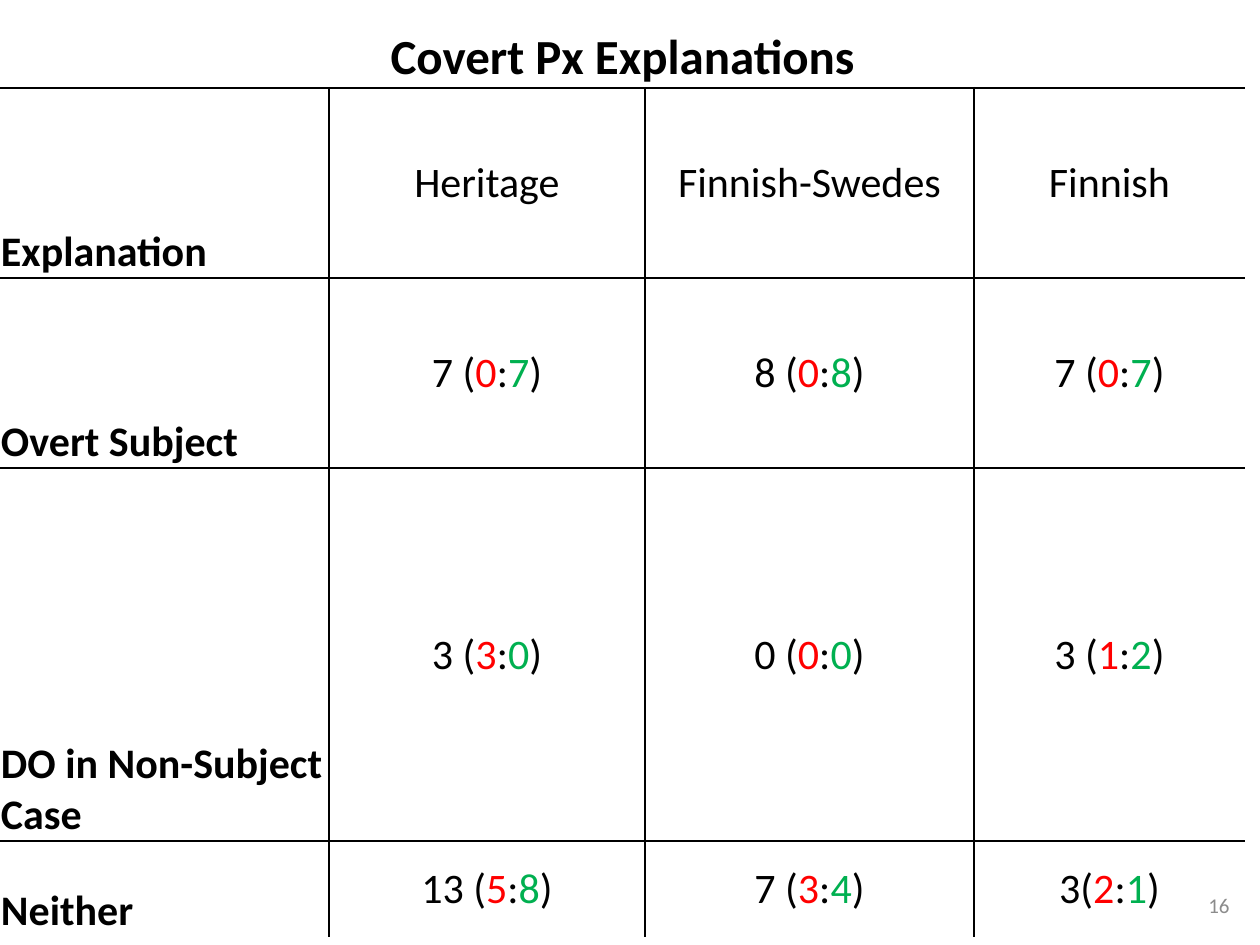
"""Build the Covert Px Explanations table slide."""
from dataclasses import dataclass

from lxml import etree
from pptx import Presentation
from pptx import util as u
from pptx.dml import color
from pptx.enum import text
from pptx.oxml import ns


@dataclass(frozen=True)
class Theme:
    font: str = "Calibri"
    ink: str = "000000"
    red: str = "FF0000"
    green: str = "00B050"
    gray: str = "8C8C8C"
    title_size: int = 28
    body_size: int = 24
    number_size: int = 12
    rule: float = 1.5


THEME = Theme()
COLUMNS = [329, 316, 329, 271]
ROWS = [60, 190, 190, 373, 96]
TITLE = "Covert Px Explanations"
HEADINGS = ["Explanation", "Heritage", "Finnish-Swedes", "Finnish"]
RESULTS = [
    ("Overt Subject", [("7 (", 0, 7), ("8 (", 0, 8), ("7 (", 0, 7)]),
    ("DO in Non-Subject Case", [("3 (", 3, 0), ("0 (", 0, 0), ("3 (", 1, 2)]),
    ("Neither", [("13 (", 5, 8), ("7 (", 3, 4), ("3(", 2, 1)]),
]


def px(length):
    """Turn pixels at 126 to the inch into EMU."""
    return u.Emu(round(length * 914400 / 126))


def write(frame, spans, *, size, bold=False, align=text.PP_ALIGN.LEFT):
    """Fill a text frame with one paragraph of (words, colour) spans."""
    para = frame.paragraphs[0]
    para.alignment = align
    for words, tint in spans:
        span = para.add_run()
        span.text = words
        span.font.name = THEME.font
        span.font.size = u.Pt(size)
        span.font.bold = bold
        span.font.color.rgb = color.RGBColor.from_string(tint)


def ratio(lead, wrong, right):
    """Return the spans of a count with its red and green parts."""
    return [(lead, THEME.ink), (str(wrong), THEME.red), (":", THEME.ink),
            (str(right), THEME.green), (")", THEME.ink)]


class SlideBuilder:
    """Holds the theme and the current slide."""

    def __init__(self, slide, theme):
        """Keep the slide and its style."""
        self.slide = slide
        self.theme = theme

    def borders(self, cell, sides):
        """Rule the named sides of a cell and clear the others."""
        properties = cell._tc.get_or_add_tcPr()
        for index, side in enumerate("LRTB"):
            line = etree.Element(ns.qn(f"a:ln{side}"))
            if side in sides:
                line.set("w", str(u.Pt(self.theme.rule)))
                fill = etree.SubElement(line, ns.qn("a:solidFill"))
                etree.SubElement(fill, ns.qn("a:srgbClr"), val=self.theme.ink)
            else:
                etree.SubElement(line, ns.qn("a:noFill"))
            properties.insert(index, line)

    def table(self, left, top, columns, rows):
        """Add a plain table ruled between its cells below the title row."""
        frame = self.slide.shapes.add_table(
            len(rows), len(columns), px(left), px(top),
            px(sum(columns)), px(sum(rows)))
        table = frame.table
        table.first_row = table.horz_banding = False
        for column, width in zip(table.columns, columns):
            column.width = px(width)
        for row, height in zip(table.rows, rows):
            row.height = px(height)
        last_row, last_column = len(rows) - 1, len(columns) - 1
        for r in range(len(rows)):
            for c in range(len(columns)):
                cell = table.cell(r, c)
                cell.fill.background()
                self.borders(cell, "".join([
                    "L" if r and c else "",
                    "R" if r and c < last_column else "",
                    "T" if r else "",
                    "B" if r < last_row else ""]))
        table.cell(0, 0).merge(table.cell(0, last_column))
        return table

    def cell(self, cell, spans, *, middle=True, **style):
        """Write into a cell, anchored at its middle or bottom."""
        cell.margin_left = cell.margin_right = cell.margin_top = px(1)
        cell.margin_bottom = 0
        anchor = text.MSO_ANCHOR
        cell.vertical_anchor = anchor.MIDDLE if middle else anchor.BOTTOM
        write(cell.text_frame, spans, **style)

    def number(self, words, left, top, width, height):
        """Add the right-aligned slide number."""
        box = self.slide.shapes.add_textbox(
            px(left), px(top), px(width), px(height))
        box.text_frame.word_wrap = True
        box.text_frame.vertical_anchor = text.MSO_ANCHOR.MIDDLE
        write(box.text_frame, [(words, self.theme.gray)],
              size=self.theme.number_size, align=text.PP_ALIGN.RIGHT)


def main():
    """Build and save the deck."""
    deck = Presentation()
    deck.slide_width, deck.slide_height = px(1260), px(945)
    page = SlideBuilder(deck.slides.add_slide(deck.slide_layouts[6]), THEME)
    table = page.table(0, 27, COLUMNS, ROWS)
    center = text.PP_ALIGN.CENTER
    page.cell(table.cell(0, 0), [(TITLE, THEME.ink)], middle=False,
              size=THEME.title_size, bold=True, align=center)
    header = (HEADINGS[0], [[(name, THEME.ink)] for name in HEADINGS[1:]])
    results = [(label, [ratio(*count) for count in counts])
               for label, counts in RESULTS]
    for r, (label, entries) in enumerate([header, *results], start=1):
        page.cell(table.cell(r, 0), [(label, THEME.ink)], middle=False,
                  size=THEME.body_size, bold=True)
        for c, spans in enumerate(entries, start=1):
            page.cell(table.cell(r, c), spans,
                      size=THEME.body_size, align=center)
    page.number("16", 948, 880, 294, 50)
    deck.save("out.pptx")


if __name__ == "__main__":
    main()
